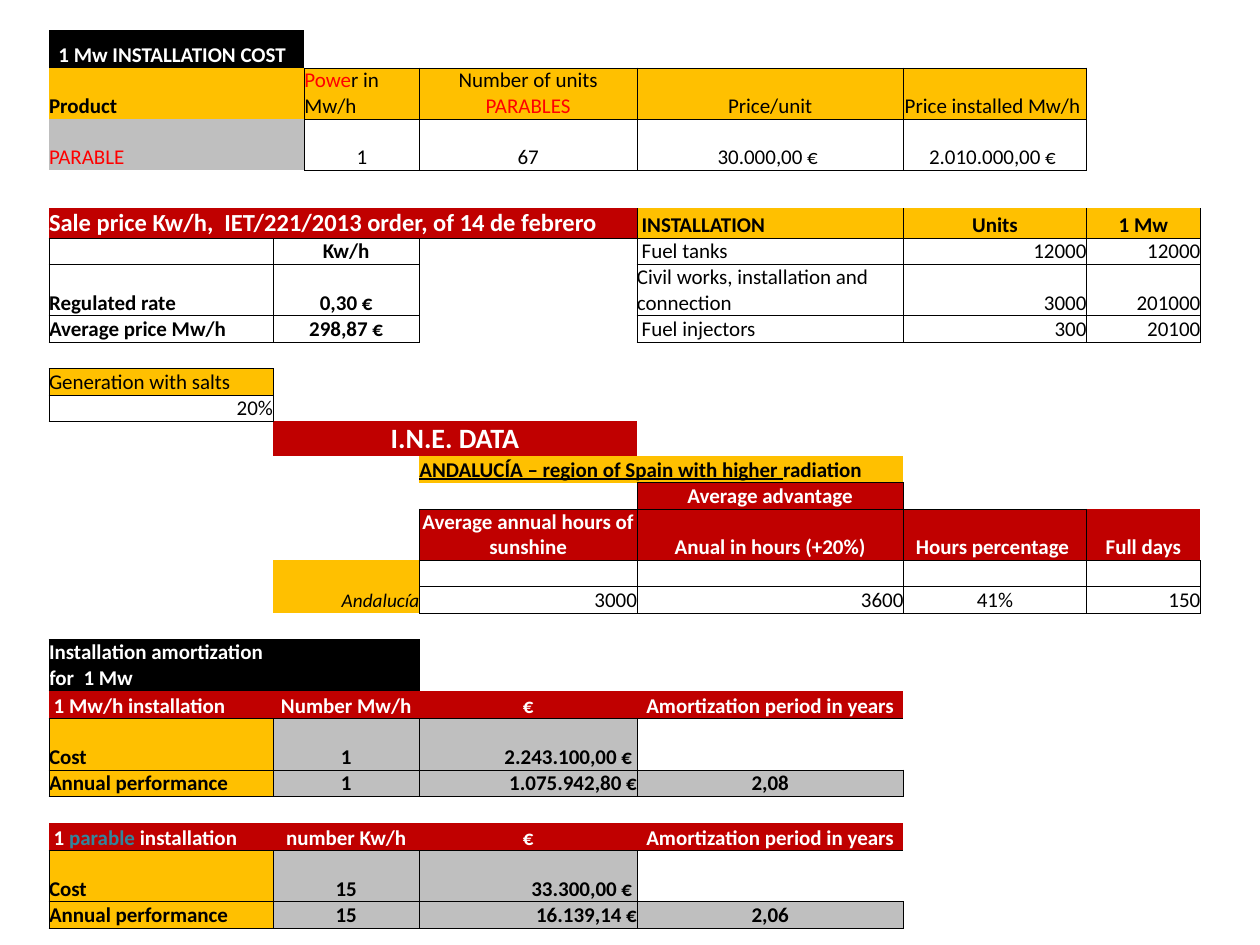
from lxml import etree
from pptx import Presentation
from pptx.dml.color import RGBColor
from pptx.enum.text import MSO_ANCHOR, PP_ALIGN
from pptx.oxml.ns import qn
from pptx.util import Pt

LEFT, CENTER, RIGHT = PP_ALIGN.LEFT, PP_ALIGN.CENTER, PP_ALIGN.RIGHT
BOTTOM = MSO_ANCHOR.BOTTOM
NO_GRID_STYLE = "{2D5ABB26-0587-4C30-8999-92F81FD0307C}"

THEME = {
    "font": "Calibri",
    "size": 12, "sale": 14, "data": 16, "region": 11,
    "black": "000000", "white": "FFFFFF", "red": "C00000", "gold": "FFC000",
    "gray": "BFBFBF", "bright": "FF0000", "teal": "31859C",
    "border": 0.5,
}

# kind: fill, text colour, bold, alignment, bordered sides
KINDS = {
    "title": ("black", "white", True, LEFT, ""),
    "black box": ("black", "white", True, LEFT, "LRTB"),
    "product": ("gold", "black", True, LEFT, ""),
    "parable": ("gray", "bright", False, LEFT, ""),
    "gold left": ("gold", "black", False, LEFT, "LRTB"),
    "gold center": ("gold", "black", False, CENTER, "LRTB"),
    "gold bold": ("gold", "black", True, LEFT, "LRTB"),
    "install left": ("gold", "black", True, LEFT, "LRB"),
    "install center": ("gold", "black", True, CENTER, "LRB"),
    "region title": ("gold", "black", True, LEFT, ""),
    "region": ("gold", "black", False, RIGHT, ""),
    "banner left": ("red", "white", True, LEFT, ""),
    "banner center": ("red", "white", True, CENTER, ""),
    "red left": ("red", "white", True, LEFT, "B"),
    "red center": ("red", "white", True, CENTER, "B"),
    "red box": ("red", "white", True, CENTER, "LRTB"),
    "red top": ("red", "white", True, CENTER, "LRT"),
    "red bottom": ("red", "white", True, CENTER, "LRB"),
    "red last": ("red", "white", True, CENTER, "LB"),
    "left": (None, "black", False, LEFT, "LRTB"),
    "center": (None, "black", False, CENTER, "LRTB"),
    "right": (None, "black", False, RIGHT, "LRTB"),
    "bold left": (None, "black", True, LEFT, "LRTB"),
    "bold center": (None, "black", True, CENTER, "LRTB"),
    "gray center": ("gray", "black", True, CENTER, "LRTB"),
    "gray right": ("gray", "black", True, RIGHT, "LRTB"),
}

# Texts with mixed formatting: paragraphs of (text, colour, underline)
POWER = [[("Powe", "bright", False), ("r in  Mw/h", "black", False)]]
UNITS = [[("Number of units", "black", False)], [("PARABLES", "bright", False)]]
ANDALUCIA = [[("ANDALUCÍA – region of Spain with higher ", "black", True),
              ("radiation", "black", False)]]
PARABLE_INSTALLATION = [[(" 1 ", "white", False), ("parable ", "teal", False),
                         ("installation", "white", False)]]

# row, first column, last column, kind, text
CELLS = [
    # Installation cost
    (0, 0, 1, "title", "  1 Mw INSTALLATION COST"),
    (1, 0, 1, "product", "Product"),
    (1, 2, 2, "gold left", POWER),
    (1, 3, 3, "gold center", UNITS),
    (1, 4, 4, "gold center", "Price/unit"),
    (1, 5, 5, "gold center", "Price installed Mw/h "),
    (2, 0, 1, "parable", "PARABLE"),
    (2, 2, 2, "center", "1"),
    (2, 3, 3, "center", "67"),
    (2, 4, 4, "center", "30.000,00 € "),
    (2, 5, 5, "center", "2.010.000,00 € "),
    # Sale price
    (4, 0, 3, "banner left", "Sale price Kw/h,  IET/221/2013 order, of 14 de febrero"),
    (5, 0, 0, "left", ""),
    (5, 1, 2, "bold center", "Kw/h"),
    (6, 0, 0, "bold left", "Regulated rate"),
    (6, 1, 2, "bold center", "0,30 €"),
    (7, 0, 0, "bold left", "Average price Mw/h"),
    (7, 1, 2, "bold center", "298,87 €"),
    # Installation units
    (4, 4, 4, "install left", " INSTALLATION"),
    (4, 5, 5, "install center", "Units"),
    (4, 6, 6, "install center", "1 Mw"),
    (5, 4, 4, "left", " Fuel tanks"),
    (5, 5, 5, "right", "12000"),
    (5, 6, 6, "right", "12000"),
    (6, 4, 4, "left", "Civil works, installation and connection"),
    (6, 5, 5, "right", "3000"),
    (6, 6, 6, "right", "201000"),
    (7, 4, 4, "left", " Fuel injectors"),
    (7, 5, 5, "right", "300"),
    (7, 6, 6, "right", "20100"),
    # Generation with salts
    (9, 0, 0, "gold left", "Generation with salts"),
    (10, 0, 0, "right", "20%"),
    # Sunshine data
    (11, 1, 3, "banner center", "I.N.E. DATA"),
    (12, 3, 4, "region title", ANDALUCIA),
    (13, 4, 4, "red top", "Average advantage"),
    (14, 3, 3, "red box", "Average annual hours of sunshine"),
    (14, 4, 4, "red bottom", "Anual in hours (+20%)"),
    (14, 5, 5, "red box", "Hours percentage "),
    (14, 6, 6, "red last", "Full days"),
    (15, 1, 2, "region", ""),
    *[(15, column, column, "left", "") for column in range(3, 7)],
    (16, 1, 2, "region", "Andalucía"),
    (16, 3, 3, "right", "3000"),
    (16, 4, 4, "right", "3600"),
    (16, 5, 5, "center", "41%"),
    (16, 6, 6, "right", "150"),
    # Amortization title
    (18, 0, 0, "black box", "Installation amortization for  1 Mw"),
    (18, 1, 2, "black box", ""),
]

# Both amortization blocks share one layout
for top, installation, unit, count, cost, performance, years in [
    (19, " 1 Mw/h installation", "Number Mw/h", "1", "2.243.100,00 € ", "1.075.942,80 €", "2,08"),
    (23, PARABLE_INSTALLATION, "number Kw/h", "15", "33.300,00 € ", "16.139,14 €", "2,06"),
]:
    CELLS += [
        (top, 0, 0, "red left", installation),
        (top, 1, 2, "red center", unit),
        (top, 3, 3, "red center", "€"),
        (top, 4, 4, "red center", "Amortization period in years"),
        (top + 1, 0, 0, "gold bold", "Cost"),
        (top + 1, 1, 2, "gray center", count),
        (top + 1, 3, 3, "gray right", cost),
        (top + 2, 0, 0, "gold bold", "Annual performance"),
        (top + 2, 1, 2, "gray center", count),
        (top + 2, 3, 3, "gray right", performance),
        (top + 2, 4, 4, "gray center", years),
    ]

SPECIAL_SIZES = {(4, 0): "sale", (11, 1): "data", (16, 1): "region"}

COLUMN_WIDTHS = [128, 18, 65.7, 124.3, 152.3, 104.6, 65.1]
LINE, DOUBLE = 15.1, 29.2
ROW_HEIGHTS = [21.8, DOUBLE, DOUBLE, 21.8, 17, LINE, DOUBLE, LINE, LINE, LINE, LINE, 20,
               LINE, LINE, DOUBLE, LINE, LINE, LINE, DOUBLE, 16, DOUBLE, LINE, LINE, 16,
               DOUBLE, LINE]


def rgb(name):
    return RGBColor.from_string(THEME[name])


def add_borders(cell, sides):
    properties = cell._tc.get_or_add_tcPr()
    for side in sides:
        line = etree.SubElement(properties, qn(f"a:ln{side}"), w=str(Pt(THEME["border"])))
        solid = etree.SubElement(line, qn("a:solidFill"))
        etree.SubElement(solid, qn("a:srgbClr"), val=THEME["black"])


presentation = Presentation()
presentation.slide_width, presentation.slide_height = Pt(720), Pt(540)
slide = presentation.slides.add_slide(presentation.slide_layouts[6])

# Plain grid
frame = slide.shapes.add_table(len(ROW_HEIGHTS), len(COLUMN_WIDTHS), Pt(28), Pt(17),
                               Pt(sum(COLUMN_WIDTHS)), Pt(sum(ROW_HEIGHTS)))
costs = frame.table
costs.first_row = costs.horz_banding = False
costs._tbl.tblPr.find(qn("a:tableStyleId")).text = NO_GRID_STYLE
for column, width in zip(costs.columns, COLUMN_WIDTHS):
    column.width = Pt(width)
for row, height in zip(costs.rows, ROW_HEIGHTS):
    row.height = Pt(height)

# Merged cells, borders and fills
contents = {(row, first): (kind, text) for row, first, last, kind, text in CELLS}
for row, first, last, kind, text in CELLS:
    if last > first:
        costs.cell(row, first).merge(costs.cell(row, last))
for row in range(len(ROW_HEIGHTS)):
    for column in range(len(COLUMN_WIDTHS)):
        cell = costs.cell(row, column)
        kind, text = contents.get((row, column), (None, ""))
        fill, color, bold, align, sides = KINDS.get(kind, (None, "black", False, LEFT, ""))
        cell.margin_left = cell.margin_right = cell.margin_top = cell.margin_bottom = 0
        cell.vertical_anchor = BOTTOM
        add_borders(cell, sides)
        if fill:
            cell.fill.solid()
            cell.fill.fore_color.rgb = rgb(fill)
        else:
            cell.fill.background()

        # Cell text
        size = Pt(THEME[SPECIAL_SIZES.get((row, column), "size")])
        paragraphs = text if isinstance(text, list) else [[(text, color, False)]]
        for index, runs in enumerate(paragraphs):
            body = cell.text_frame
            paragraph = body.paragraphs[0] if index == 0 else body.add_paragraph()
            paragraph.alignment = align
            paragraph.font.name = THEME["font"]
            paragraph.font.size = size
            paragraph.font.bold = bold
            paragraph.font.italic = (row, column) == (16, 1)
            for words, run_color, underline in runs:
                if words:
                    run = paragraph.add_run()
                    run.text = words
                    run.font.color.rgb = rgb(run_color)
                    run.font.underline = underline
            etree.SubElement(paragraph._p, qn("a:endParaRPr"), sz=str(int(size.pt * 100)))

presentation.save("out.pptx")
